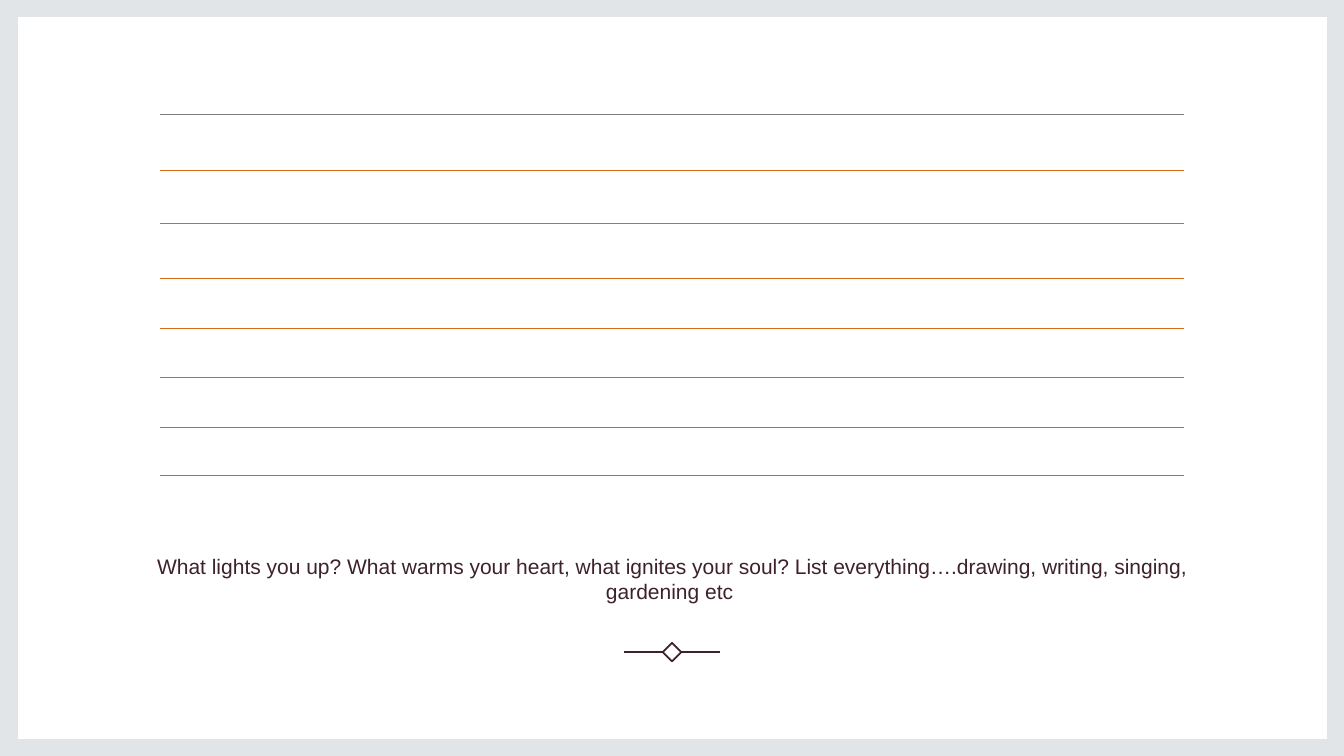
from lxml import etree
from pptx import Presentation
from pptx.dml.color import RGBColor
from pptx.enum.shapes import MSO_CONNECTOR, MSO_SHAPE
from pptx.enum.text import MSO_ANCHOR, PP_ALIGN
from pptx.oxml.ns import qn
from pptx.util import Inches, Pt

STRAIGHT = MSO_CONNECTOR.STRAIGHT
RECTANGLE = MSO_SHAPE.RECTANGLE
BOTTOM = MSO_ANCHOR.BOTTOM
CENTER = PP_ALIGN.CENTER

COLORS = {
    "border": "E2E5E8",
    "page": "FFFFFF",
    "ink": "3D2229",
    "orange": "D56A17",
    "grey": "7F7F7F",
}
FONT = "Arial"
PROMPT = (
    "What lights you up? What warms your heart, what ignites your soul? "
    "List everything….drawing, writing, singing, gardening etc "
)
RULES = [
    (1.13, "grey"),
    (1.69, "orange"),
    (2.22, "orange"),
    (2.76, "orange"),
    (3.26, "orange"),
    (3.74, "grey"),
    (4.24, "grey"),
    (4.72, "grey"),
]


def rgb(name):
    return RGBColor.from_string(COLORS[name])


def add_panel(slide, left, top, width, height, color):
    panel = slide.shapes.add_shape(
        RECTANGLE, Inches(left), Inches(top), Inches(width), Inches(height)
    )
    panel.shadow.inherit = False
    panel.fill.solid()
    panel.fill.fore_color.rgb = rgb(color)
    panel.line.fill.background()
    return panel


def add_rule(shapes, left, right, y, color, weight):
    rule = shapes.add_connector(
        STRAIGHT, Inches(left), Inches(y), Inches(right), Inches(y)
    )
    rule.line.color.rgb = rgb(color)
    rule.line.width = Pt(weight)
    etree.SubElement(rule._element.spPr, qn("a:effectLst"))


def add_frame(slide, width, height):
    add_panel(slide, 0, 0, width, height, "border")
    add_panel(slide, 0.18, 0.17, width - 0.35, height - 0.34, "page")


def add_writing_lines(slide, left, width):
    for y, color in RULES:
        add_rule(slide.shapes, left, left + width, y, color, 0.5)


def add_prompt(slide, left, top, width, height):
    prompt = slide.shapes.add_textbox(
        Inches(left), Inches(top), Inches(width), Inches(height)
    )
    frame = prompt.text_frame
    frame.word_wrap = True
    frame.vertical_anchor = BOTTOM
    paragraph = frame.paragraphs[0]
    paragraph.alignment = CENTER
    run = paragraph.add_run()
    run.text = PROMPT
    run.font.name = FONT
    run.font.size = Pt(15)
    run.font.color.rgb = rgb("ink")


def add_ornament(slide, center_x, center_y, width):
    side, gap = 0.13, 0.09
    ornament = slide.shapes.add_group_shape()
    diamond = ornament.shapes.add_shape(
        RECTANGLE,
        Inches(center_x - side / 2),
        Inches(center_y - side / 2),
        Inches(side),
        Inches(side),
    )
    diamond.rotation = 45
    diamond.shadow.inherit = False
    diamond.fill.background()
    diamond.line.color.rgb = rgb("ink")
    diamond.line.width = Pt(1.25)
    for start, end in ((-width / 2, -gap), (gap, width / 2)):
        add_rule(
            ornament.shapes, center_x + start, center_x + end, center_y, "ink", 1.25
        )


def build_journal_slide(prs, width, height):
    slide = prs.slides.add_slide(prs.slide_layouts[6])
    add_frame(slide, width, height)
    add_prompt(slide, 1.13, 5.36, 11.08, 0.68)
    add_ornament(slide, width / 2, 6.47, 0.95)
    add_writing_lines(slide, 1.59, 10.15)


def main():
    width, height = 13.33, 7.5
    prs = Presentation()
    prs.slide_width = Inches(width)
    prs.slide_height = Inches(height)
    build_journal_slide(prs, width, height)
    prs.save("out.pptx")


if __name__ == "__main__":
    main()
